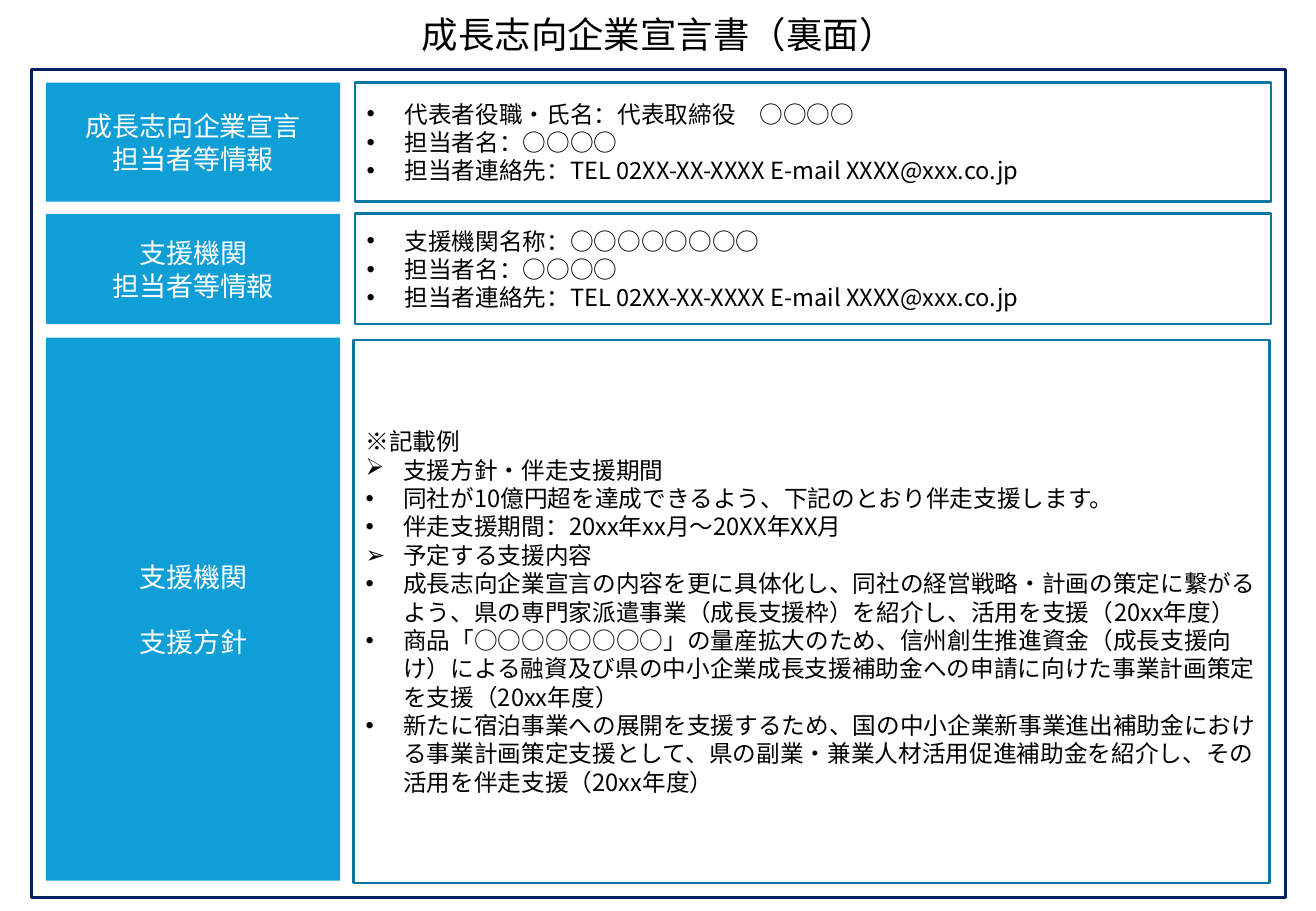
from dataclasses import dataclass

from lxml import etree
from pptx import Presentation
from pptx.dml import color
from pptx.enum import shapes, text
from pptx.oxml import ns
from pptx.util import Inches, Pt


@dataclass(frozen=True)
class Theme:
    font: str = "Noto Sans CJK JP"
    black: str = "000000"
    white: str = "FFFFFF"
    navy: str = "002060"
    label_fill: str = "0F9ED5"
    detail_line: str = "0B76A0"
    title_size: float = 21.6
    label_size: float = 16
    detail_size: float = 14
    line_width: float = 1.5


THEME = Theme()
DOT, ARROW = "•", "➢"
LABEL_LEFT, LABEL_WIDTH = 0.38, 2.42
DETAIL_WIDTH = 7.54
CONTACT = [
    (DOT, "担当者名：○○○○"),
    (DOT, "担当者連絡先：TEL 02XX-XX-XXXX E-mail XXXX@xxx.co.jp"),
]

# Each row: label top, height, label lines, gap between them, detail left and top, details
ROWS = [
    (0.68, 0.98, ["成長志向企業宣言", "担当者等情報"], 0, (2.92, 0.68),
     [(DOT, "代表者役職・氏名：代表取締役　○○○○"), *CONTACT]),
    (1.76, 0.91, ["支援機関", "担当者等情報"], 0, (2.92, 1.76),
     [(DOT, "支援機関名称：○○○○○○○○"), *CONTACT]),
    (2.78, 4.47, ["支援機関", "支援方針"], 19.25, (2.91, 2.8), [
        (None, "※記載例"),
        (ARROW, "支援方針・伴走支援期間"),
        (DOT, "同社が10億円超を達成できるよう、下記のとおり伴走支援します。"),
        (DOT, "伴走支援期間：20xx年xx月～20XX年XX月"),
        (ARROW, "予定する支援内容"),
        (DOT, "成長志向企業宣言の内容を更に具体化し、同社の経営戦略・計画の策定に繋がるよう、"
              "県の専門家派遣事業（成長支援枠）を紹介し、活用を支援（20xx年度）"),
        (DOT, "商品「○○○○○○○○」の量産拡大のため、信州創生推進資金（成長支援向け）による融資及び"
              "県の中小企業成長支援補助金への申請に向けた事業計画策定を支援（20xx年度）"),
        (DOT, "新たに宿泊事業への展開を支援するため、国の中小企業新事業進出補助金における"
              "事業計画策定支援として、県の副業・兼業人材活用促進補助金を紹介し、"
              "その活用を伴走支援（20xx年度）"),
    ]),
]


def rgb(value):
    return color.RGBColor.from_string(value)


def add_bullet(para, mark):
    """Give the paragraph a hanging bullet."""
    props = para._p.get_or_add_pPr()
    props.set("marL", str(Inches(0.31)))
    props.set("indent", str(-Inches(0.31)))
    if mark == DOT:
        etree.SubElement(props, ns.qn("a:buFont")).set("typeface", "Arial")
    etree.SubElement(props, ns.qn("a:buChar")).set("char", mark)


def write(box, lines, size, ink, align, gap=0):
    """Fill a box with (bullet, wording) lines."""
    frame = box.text_frame
    frame.word_wrap = True
    frame.vertical_anchor = text.MSO_ANCHOR.MIDDLE
    for index, (mark, wording) in enumerate(lines):
        para = frame.add_paragraph() if index else frame.paragraphs[0]
        para.text = wording
        para.alignment = align
        if index and gap:
            para.space_before = Pt(gap)
        if mark:
            add_bullet(para, mark)
        font = para.font
        font.size = Pt(size)
        font.color.rgb = rgb(ink)
        font.name = THEME.font
        # East Asian letters take their typeface from a separate element
        east = etree.SubElement(font._element, ns.qn("a:ea"))
        east.set("typeface", THEME.font)


def add_panel(page, left, top, width, height, fill=None, line=None):
    """Add a rectangle that is either filled or outlined."""
    box = page.shapes.add_shape(
        shapes.MSO_SHAPE.RECTANGLE,
        Inches(left), Inches(top), Inches(width), Inches(height))
    box.shadow.inherit = False
    if fill:
        box.fill.solid()
        box.fill.fore_color.rgb = rgb(fill)
    else:
        box.fill.background()
    if line:
        box.line.color.rgb = rgb(line)
        box.line.width = Pt(THEME.line_width)
    else:
        box.line.fill.background()
    return box


def add_title(page, wording):
    box = page.shapes.add_textbox(
        Inches(0.26), Inches(0.11), Inches(10.32), Inches(0.4))
    write(box, [(None, wording)], THEME.title_size, THEME.black, text.PP_ALIGN.CENTER)
    box.text_frame.paragraphs[0].line_spacing = 0.8


def add_row(page, top, height, label, gap, detail_at, details):
    """Add a label panel and the detail panel beside it."""
    box = add_panel(page, LABEL_LEFT, top, LABEL_WIDTH, height, fill=THEME.label_fill)
    write(box, [(None, line) for line in label],
          THEME.label_size, THEME.white, text.PP_ALIGN.CENTER, gap)
    box = add_panel(page, *detail_at, DETAIL_WIDTH, height, line=THEME.detail_line)
    write(box, details, THEME.detail_size, THEME.black, text.PP_ALIGN.LEFT)


def main():
    deck = Presentation()
    deck.slide_width, deck.slide_height = Inches(10.83), Inches(7.5)
    page = deck.slides.add_slide(deck.slide_layouts[6])

    # Title and outer frame
    add_title(page, "成長志向企業宣言書（裏面）")
    add_panel(page, 0.26, 0.57, 10.32, 6.82, line=THEME.navy)

    # Labelled rows
    for row in ROWS:
        add_row(page, *row)

    deck.save("out.pptx")


if __name__ == "__main__":
    main()
